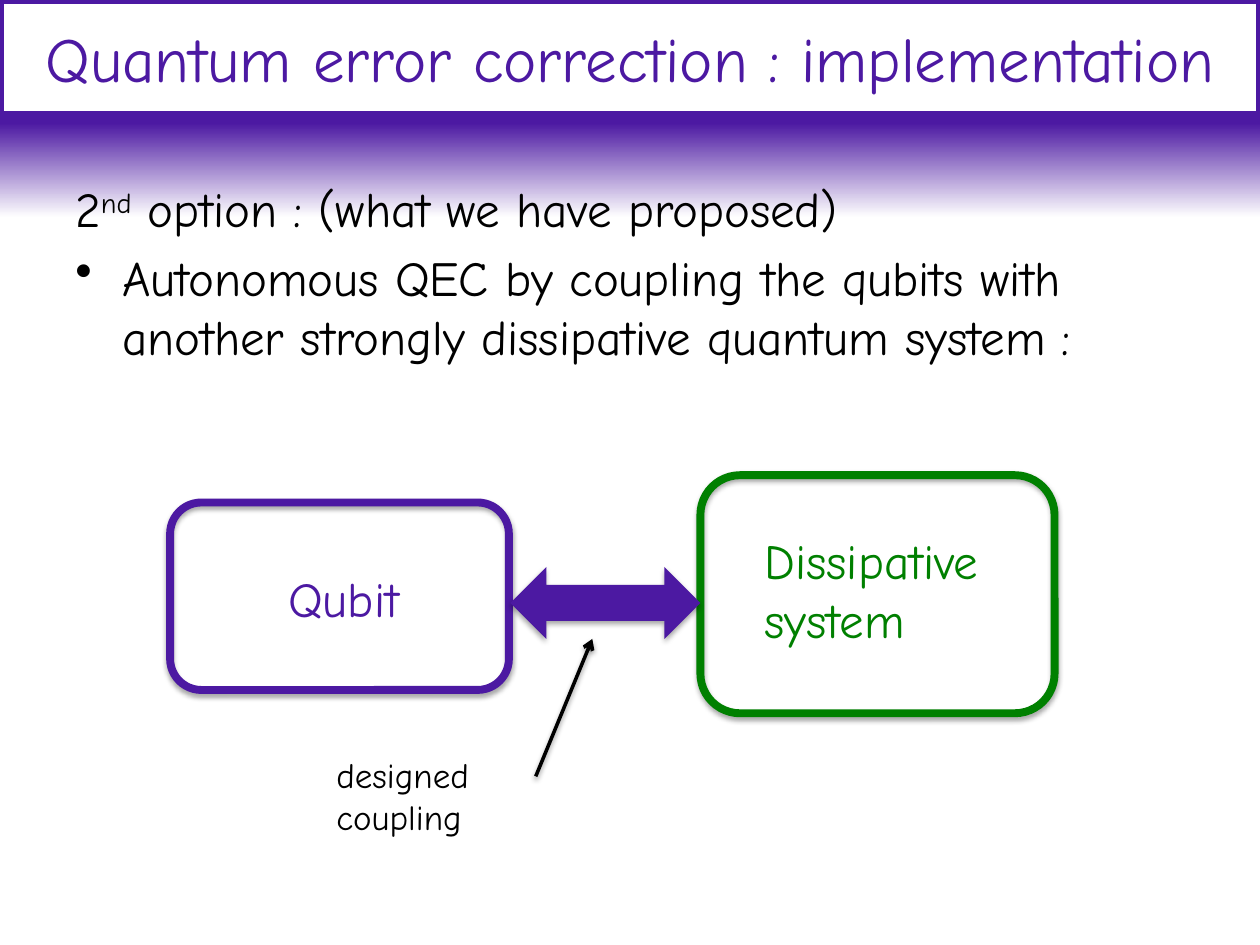
"""Build the slide on implementing quantum error correction by dissipation."""
from dataclasses import dataclass

from lxml import etree
from pptx import Presentation
from pptx.dml.color import RGBColor
from pptx.enum.shapes import MSO_CONNECTOR, MSO_SHAPE
from pptx.enum.text import MSO_ANCHOR, MSO_AUTO_SIZE, PP_ALIGN
from pptx.oxml.ns import qn
from pptx.util import Cm, Pt

RECTANGLE = MSO_SHAPE.RECTANGLE
ROUNDED = MSO_SHAPE.ROUNDED_RECTANGLE
DOUBLE_ARROW = MSO_SHAPE.LEFT_RIGHT_ARROW
STRAIGHT = MSO_CONNECTOR.STRAIGHT
MIDDLE = MSO_ANCHOR.MIDDLE
CENTER = PP_ALIGN.CENTER
FIT_TEXT = MSO_AUTO_SIZE.SHAPE_TO_FIT_TEXT

FONT = "Comic Neue"
PURPLE, GREEN, BLACK, WHITE = "4C19A2", "008000", "000000", "FFFFFF"
BORDER = 4.5


@dataclass(frozen=True)
class Area:
    left: float
    top: float
    width: float
    height: float

    def lengths(self) -> tuple:
        return tuple(Cm(n) for n in (self.left, self.top, self.width, self.height))


@dataclass(frozen=True)
class Block:
    area: Area
    kind: int
    fill: str | None = None
    border: str | None = None
    shadow: bool = True


@dataclass(frozen=True)
class Label:
    area: Area
    lines: tuple[str, ...]
    size: float
    color: str


TITLE = Block(Area(0, 0, 25.4, 2.31), RECTANGLE, WHITE, PURPLE, False)
BLOCKS = (
    Block(Area(3.43, 10.13, 6.83, 3.78), ROUNDED, border=PURPLE),
    Block(Area(14.12, 9.58, 7.14, 4.8), ROUNDED, border=GREEN),
    Block(Area(10.29, 11.43, 3.83, 1.45), DOUBLE_ARROW, fill=PURPLE),
)
LABELS = (
    Label(Area(5.56, 11.33, 3, 1.45), ("Qubit",), 28, PURPLE),
    Label(Area(15.16, 10.57, 5.18, 2.64), ("Dissipative", "system"), 28, GREEN),
    Label(Area(6.53, 15.06, 3.3, 1.96), ("designed", "coupling"), 20, BLACK),
)


def rgb(code: str) -> RGBColor:
    return RGBColor.from_string(code)


def style(paragraph, size: float, color: str) -> None:
    paragraph.font.name = FONT
    paragraph.font.size = Pt(size)
    paragraph.font.color.rgb = rgb(color)


def cast_shadow(properties, distance: float, opacity: int) -> None:
    effects = etree.SubElement(properties, qn("a:effectLst"))
    outer = etree.SubElement(
        effects, qn("a:outerShdw"), blurRad=str(Pt(3.1)), dist=str(Pt(distance)),
        dir="5400000", rotWithShape="0")
    color = etree.SubElement(outer, qn("a:srgbClr"), val=BLACK)
    etree.SubElement(color, qn("a:alpha"), val=str(opacity * 1000))


def paint_background(slide) -> None:
    fill = slide.background.fill
    fill.gradient()
    fill.gradient_angle = 270
    for stop, position, color in zip(fill.gradient_stops, (0.13, 0.23), (PURPLE, WHITE)):
        stop.color.rgb = rgb(color)
        stop.position = position


def draw_block(slide, block: Block):
    shape = slide.shapes.add_shape(block.kind, *block.area.lengths())
    if block.fill:
        shape.fill.solid()
        shape.fill.fore_color.rgb = rgb(block.fill)
    else:
        shape.fill.background()
    if block.border:
        shape.line.color.rgb = rgb(block.border)
        shape.line.width = Pt(BORDER)
    else:
        shape.line.fill.background()
    if block.shadow:
        cast_shadow(shape.element.spPr, 1.8, 35)
    else:
        shape.shadow.inherit = False
    return shape


def draw_title(slide) -> None:
    frame = draw_block(slide, TITLE).text_frame
    frame.vertical_anchor = MIDDLE
    heading = frame.paragraphs[0]
    heading.text = "Quantum error correction : implementation"
    heading.alignment = CENTER
    style(heading, 36, PURPLE)


def draw_proposal(slide) -> None:
    frame = slide.shapes.add_textbox(*Area(1.27, 3.48, 22.86, 13.54).lengths()).text_frame
    frame.word_wrap = True
    option, approach = frame.paragraphs[0], frame.add_paragraph()
    for words in ("2", "nd", " option : (what we have proposed)"):
        run = option.add_run()
        run.text = words
        if words == "nd":
            run.font._element.set("baseline", "30000")
    approach.text = ("Autonomous QEC by coupling the qubits with "
                     "another strongly dissipative quantum system :")
    for paragraph in (option, approach):
        paragraph.space_before = Pt(5.6)
        style(paragraph, 28, BLACK)
    indents = approach._p.get_or_add_pPr()
    indents.set("marL", str(Cm(0.95)))
    indents.set("indent", str(Cm(-0.95)))
    bullet = etree.Element(qn("a:buChar"), char="•")
    indents.find(qn("a:defRPr")).addprevious(bullet)


def draw_label(slide, label: Label) -> None:
    frame = slide.shapes.add_textbox(*label.area.lengths()).text_frame
    frame.word_wrap = False
    frame.auto_size = FIT_TEXT
    frame.text = "\n".join(label.lines)
    for paragraph in frame.paragraphs:
        style(paragraph, label.size, label.color)


def draw_pointer(slide) -> None:
    pointer = slide.shapes.add_connector(
        STRAIGHT, Cm(10.8), Cm(15.65), Cm(11.94), Cm(12.88))
    pointer.line.color.rgb = rgb(BLACK)
    pointer.line.width = Pt(2)
    properties = pointer._element.spPr
    etree.SubElement(properties.find(qn("a:ln")), qn("a:tailEnd"), type="arrow")
    cast_shadow(properties, 1.6, 38)


def main() -> None:
    deck = Presentation()
    deck.slide_width, deck.slide_height = Cm(25.4), Cm(19.05)
    slide = deck.slides.add_slide(deck.slide_layouts[6])
    paint_background(slide)
    draw_proposal(slide)
    draw_title(slide)
    for block in BLOCKS:
        draw_block(slide, block)
    for label in LABELS:
        draw_label(slide, label)
    draw_pointer(slide)
    deck.save("out.pptx")


if __name__ == "__main__":
    main()
